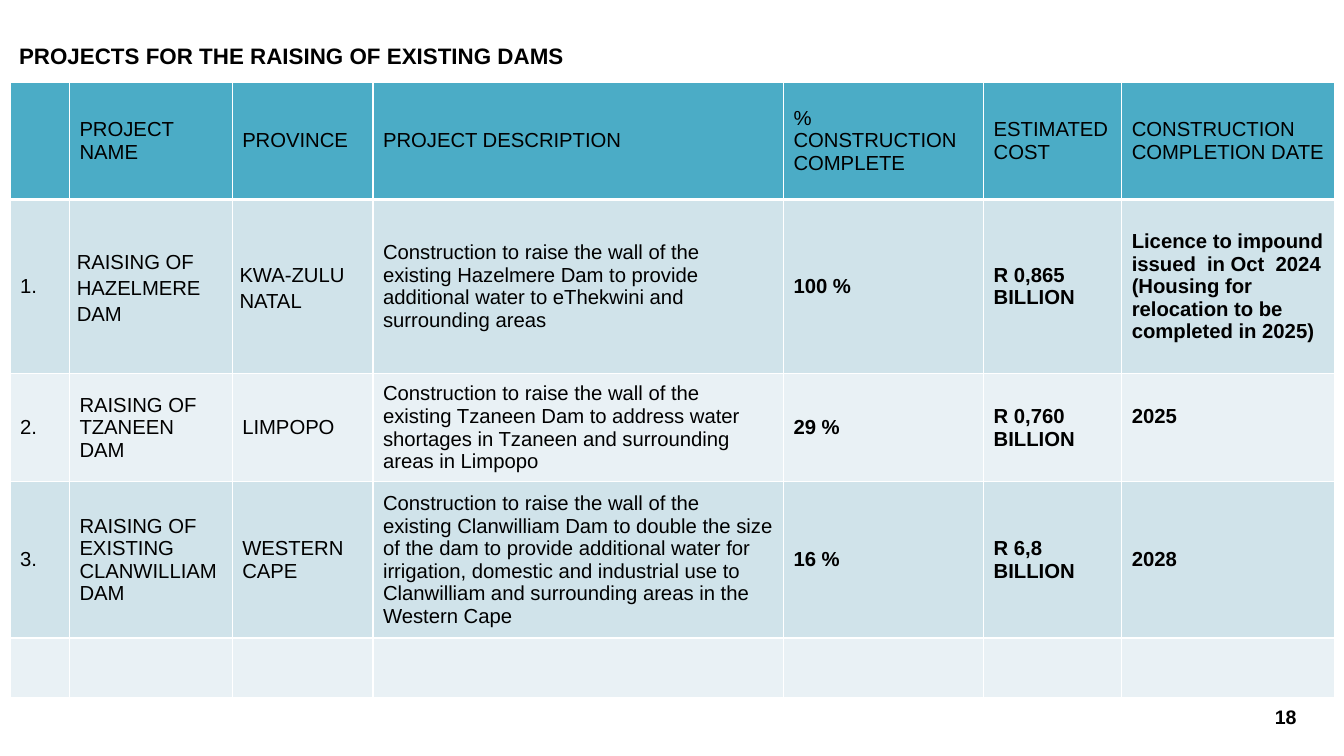
from lxml import etree
from pptx import Presentation, util as u
from pptx.dml.color import RGBColor
from pptx.enum import text
from pptx.oxml.ns import qn

COLORS = {"header": "4BACC6", "dark": "D0E3EA", "light": "E9F1F5",
          "rule": "FFFFFF", "ink": "000000"}
FONT = "Arial"
COLUMNS = [0.65, 1.78, 1.54, 4.49, 2.19, 1.51, 2.33]
ROWS = [1.28, 1.91, 1.18, 1.71, 0.65]
BOLD_FROM = 4  # progress, cost and date columns
PROJECTS = [
    ["", "PROJECT NAME", "PROVINCE", "PROJECT DESCRIPTION",
     "% CONSTRUCTION\nCOMPLETE", "ESTIMATED COST", "CONSTRUCTION COMPLETION DATE"],
    ["1.", "RAISING OF HAZELMERE DAM", "KWA-ZULU NATAL",
     "Construction to raise the wall of the existing Hazelmere Dam to provide "
     "additional water to eThekwini and surrounding areas",
     "100 %", "R 0,865 BILLION",
     "Licence to impound issued  in Oct  2024 (Housing for relocation to be "
     "completed in 2025)"],
    ["2.", "RAISING OF TZANEEN DAM", "LIMPOPO",
     "Construction to raise the wall of the existing Tzaneen Dam to address water "
     "shortages in Tzaneen and surrounding areas in Limpopo",
     "29 %", "R 0,760 BILLION", "2025"],
    ["3.", "RAISING OF EXISTING CLANWILLIAM DAM", "WESTERN CAPE",
     "Construction to raise the wall of the existing Clanwilliam Dam to double the "
     "size of the dam to provide additional water for irrigation, domestic and "
     "industrial use to Clanwilliam and surrounding areas in the Western Cape",
     "16 %", "R 6,8 BILLION", "2028"],
    [""] * len(COLUMNS),
]


def style_text(frame, size, bold, align=text.PP_ALIGN.LEFT):
    for para in frame.paragraphs:
        para.alignment = align
        for span in para.runs:
            span.font.name = FONT
            span.font.size = u.Pt(size)
            span.font.bold = bold
            span.font.color.rgb = RGBColor.from_string(COLORS["ink"])


def set_insets(target, across, down):
    target.margin_left = target.margin_right = u.Inches(across)
    target.margin_top = target.margin_bottom = u.Inches(down)


def add_borders(cell, bottom):
    properties = cell._tc.get_or_add_tcPr()
    widths = {"a:lnL": 1, "a:lnR": 1, "a:lnT": 1, "a:lnB": bottom}
    for place, (tag, width) in enumerate(widths.items()):
        line = etree.Element(qn(tag), w=str(u.Pt(width)))
        fill = etree.SubElement(line, qn("a:solidFill"))
        etree.SubElement(fill, qn("a:srgbClr"), val=COLORS["rule"])
        properties.insert(place, line)


def add_label(page, box, words, size, align=text.PP_ALIGN.LEFT):
    label = page.shapes.add_textbox(*map(u.Inches, box))
    frame = label.text_frame
    frame.word_wrap = True
    set_insets(frame, 0.1, 0.05)
    frame.text = words
    style_text(frame, size, True, align)


def fill_cell(cell, words, row, column):
    cell.text = words
    cell.vertical_anchor = text.MSO_ANCHOR.MIDDLE
    set_insets(cell, 0.11, 0.06)
    style_text(cell.text_frame, 16, row > 0 and column >= BOLD_FROM)
    shade = "header" if row == 0 else "dark" if row % 2 else "light"
    cell.fill.solid()
    cell.fill.fore_color.rgb = RGBColor.from_string(COLORS[shade])
    add_borders(cell, 3 if row == 0 else 1)


def add_projects(page, left, top):
    frame = page.shapes.add_table(
        len(ROWS), len(COLUMNS), u.Inches(left), u.Inches(top),
        u.Inches(sum(COLUMNS)), u.Inches(sum(ROWS)))
    table = frame.table
    for column, width in zip(table.columns, COLUMNS):
        column.width = u.Inches(width)
    for row, height in zip(table.rows, ROWS):
        row.height = u.Inches(height)
    for row, entries in enumerate(PROJECTS):
        for column, words in enumerate(entries):
            fill_cell(table.cell(row, column), words, row, column)

    # Looser lines for the first project's name and province
    for column in (1, 2):
        cell = table.cell(1, column)
        set_insets(cell, 0.08, 0)
        para = cell.text_frame.paragraphs[0]
        para.line_spacing = 1.15
        para.space_after = u.Pt(10)
    # The second project's date sits above the middle
    table.cell(2, 6).margin_bottom = u.Inches(0.31)


def main():
    deck = Presentation()
    deck.slide_width, deck.slide_height = u.Inches(14.7), u.Inches(8.27)
    page = deck.slides.add_slide(deck.slide_layouts[6])
    add_projects(page, 0.11, 0.9)
    # Title and page number
    add_label(page, (0.11, 0.41, 11.73, 0.58),
              "PROJECTS FOR THE RAISING OF EXISTING DAMS", 17.6)
    add_label(page, (13.55, 7.66, 0.73, 0.3), "18", 15.4, text.PP_ALIGN.RIGHT)
    deck.save("out.pptx")


if __name__ == "__main__":
    main()
